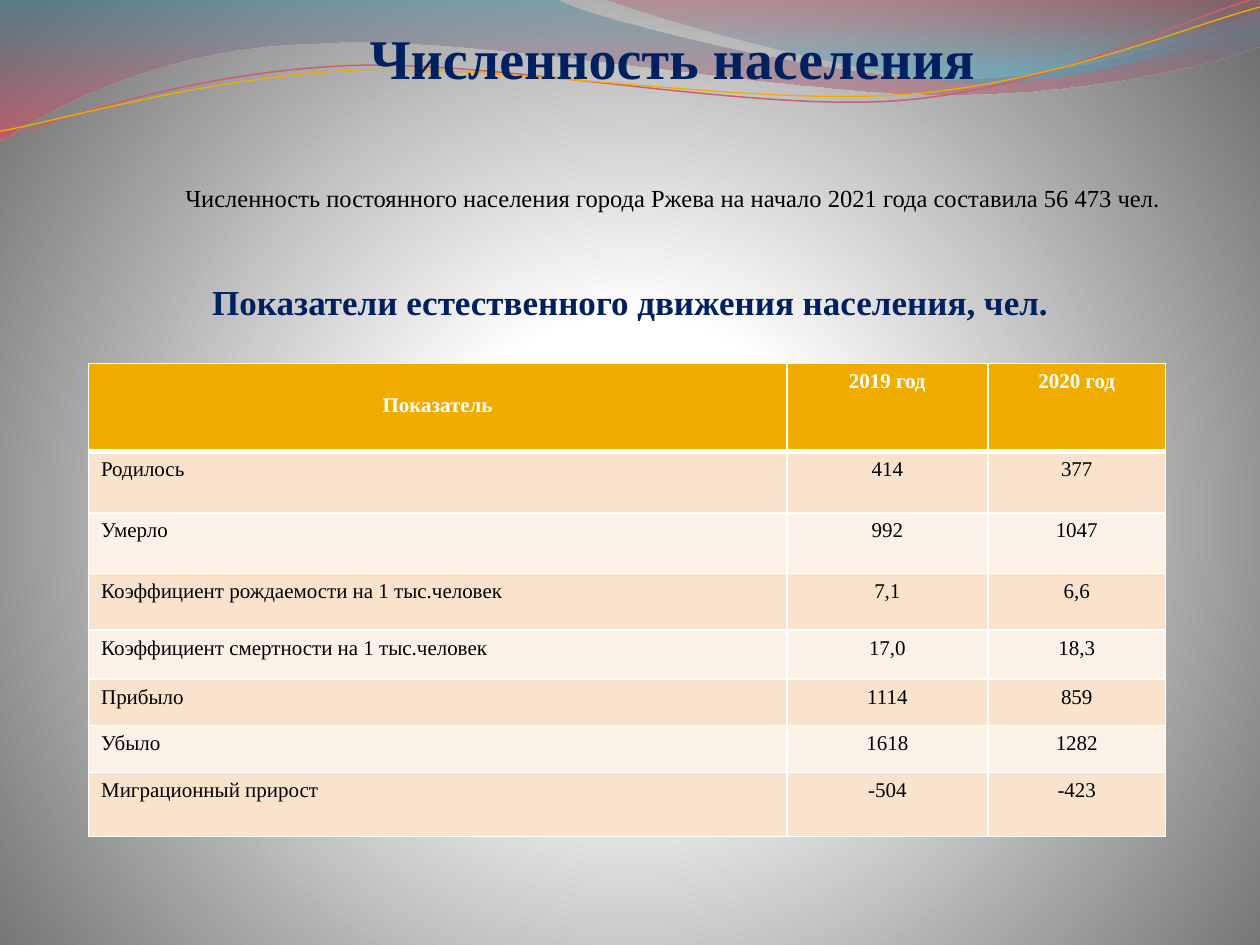
from pptx import Presentation
from pptx.dml.color import RGBColor
from pptx.enum.text import MSO_ANCHOR, MSO_AUTO_SIZE, PP_ALIGN
from pptx.oxml import parse_xml
from pptx.oxml.ns import nsdecls, qn
from pptx.util import Pt

FONT = "Times New Roman"
NAVY = RGBColor(0x00, 0x20, 0x60)
BLACK = RGBColor(0x00, 0x00, 0x00)
WHITE = RGBColor(0xFF, 0xFF, 0xFF)
GOLD = RGBColor(0xF0, 0xAD, 0x00)
ROSE = RGBColor(0xCB, 0x5F, 0x6E)
TEAL = RGBColor(0x3F, 0x8A, 0x9F)
RED = RGBColor(0xEF, 0x44, 0x5B)
DARK_RED = RGBColor(0xB8, 0x42, 0x53)
AQUA = RGBColor(0x42, 0xAB, 0xC7)
GREY = RGBColor(0x70, 0x70, 0x70)
BANDS = [RGBColor(0xFC, 0xF1, 0xE7), RGBColor(0xF9, 0xE3, 0xCC)]

DOWNWARD = '<a:lin ang="5400000" scaled="0"/>'
RADIAL = ('<a:path path="circle"><a:fillToRect l="10000" t="110000" '
          'r="10000" b="100000"/></a:path>')


def set_gradient(fill, properties, stops, shade):
    """Fill with (position %, colour, opacity %) stops."""
    fill.background()
    stop_xml = ""
    for position, color, opacity in stops:
        alpha = f'<a:alpha val="{opacity * 1000}"/>' if opacity < 100 else ""
        stop_xml += (f'<a:gs pos="{position * 1000}">'
                     f'<a:srgbClr val="{color}">{alpha}</a:srgbClr></a:gs>')
    gradient = parse_xml(f'<a:gradFill {nsdecls("a")} rotWithShape="1">'
                         f'<a:gsLst>{stop_xml}</a:gsLst>{shade}</a:gradFill>')
    properties.replace(properties.find(qn("a:noFill")), gradient)


def add_wave(start, segments, close):
    """Draw lines (x, y) and cubic curves (x1, y1, x2, y2, x, y) from start."""
    points = [(Pt(segment[i]), Pt(segment[i + 1]))
              for segment in segments for i in range(0, len(segment), 2)]
    builder = slide.shapes.build_freeform(Pt(start[0]), Pt(start[1]), scale=1.0)
    builder.add_line_segments(points, close=close)
    wave = builder.convert_to_shape()
    wave.shadow.inherit = False
    # Merge the three points of each curve into one Bezier command
    steps = iter(wave.element.findall(".//" + qn("a:lnTo")))
    for segment in segments:
        step = next(steps)
        if len(segment) == 6:
            curve = parse_xml(f'<a:cubicBezTo {nsdecls("a")}/>')
            step.addprevious(curve)
            for control in (step, next(steps), next(steps)):
                curve.append(control[0])
                control.getparent().remove(control)
    return wave


deck = Presentation()
deck.slide_width, deck.slide_height = Pt(720), Pt(540)
slide = deck.slides.add_slide(deck.slide_layouts[5])

# Background and waves
background_fill = slide.background.fill
background_fill.background()
set_gradient(background_fill, slide.element.find(".//" + qn("p:bgPr")),
             [(0, WHITE, 100), (25, WHITE, 100), (100, GREY, 100)], RADIAL)

bands = [
    ((0, 0),
     [(317, -1), (343, 12, 478, 45, 546, 45), (614, 45, 690, 19, 720, 6),
      (721, 26), (708, 32, 626, 55, 537, 54), (448, 54, 275, 20, 185, 24.5),
      (93, 26, 33, 60, -1, 81), (0, 0)],
     [(0, TEAL, 45), (100, RED, 55)]),
    ((345, -1),
     [(366, 8, 491, 44.6, 554, 47), (616, 50, 692, 23, 720, 15), (720, 0), (345, -1)],
     [(0, DARK_RED, 30), (80, AQUA, 45)]),
]
for start, segments, stops in bands:
    band = add_wave(start, segments, True)
    band.line.fill.background()
    set_gradient(band.fill, band.element.spPr, stops, DOWNWARD)

strands = [
    ((0, 80), [(35, 67, 114, 41, 199, 37.5), (284, 34, 427, 64, 513, 57.5),
               (600, 51, 675, 11, 719, -1.5)], ROSE, 0.85),
    ((0, 75), [(34, 69, 118, 44, 204, 40), (290, 37, 430, 60.5, 516, 54),
               (602, 48, 678, 15, 720, 4)], GOLD, 0.75),
]
for start, segments, color, width in strands:
    strand = add_wave(start, segments, False)
    strand.fill.background()
    strand.line.color.rgb = color
    strand.line.width = Pt(width)

# Title, moved in front of the waves
title = slide.shapes.title
slide.shapes.element.append(title.element)
title.left, title.top, title.width, title.height = Pt(118), Pt(28), Pt(534), Pt(62)
frame = title.text_frame
frame.auto_size = MSO_AUTO_SIZE.NONE
frame.vertical_anchor = MSO_ANCHOR.BOTTOM
frame.margin_left = frame.margin_top = 0
frame.margin_right, frame.margin_bottom = Pt(1.5), Pt(38)

population = slide.shapes.add_textbox(Pt(56.3), Pt(101.2), Pt(624.5), Pt(24.5))
subtitle = slide.shapes.add_textbox(Pt(39.5), Pt(157), Pt(641.5), Pt(31.5))
texts = [
    (title, "Численность населения", 32, NAVY, True, PP_ALIGN.CENTER),
    (population, "Численность постоянного населения города Ржева на начало "
     "2021 года составила 56 473 чел.", 14, BLACK, False, PP_ALIGN.JUSTIFY),
    (subtitle, "Показатели естественного движения населения, чел.",
     20, NAVY, True, PP_ALIGN.CENTER),
]
for box, text, size, color, bold, align in texts:
    box.text_frame.text = text
    box.text_frame.word_wrap = True
    para = box.text_frame.paragraphs[0]
    para.alignment = align
    font = para.runs[0].font
    font.name, font.size, font.bold = FONT, Pt(size), bold
    font.color.rgb = color
first_line = population.text_frame.paragraphs[0]
first_line._p.get_or_add_pPr().set("indent", str(Pt(42.5)))

# Table
rows = [
    ("Показатель", "2019 год", "2020 год"),
    ("Родилось", "414", "377"),
    ("Умерло", "992", "1047"),
    ("Коэффициент рождаемости на 1 тыс.человек", "7,1", "6,6"),
    ("Коэффициент смертности на 1 тыс.человек", "17,0", "18,3"),
    ("Прибыло", "1114", "859"),
    ("Убыло", "1618", "1282"),
    ("Миграционный прирост", "-504", "-423"),
]
column_widths = [399, 115, 101.5]
row_heights = [50.5, 35, 34.5, 32.5, 28, 26.5, 27, 36.5]
table = slide.shapes.add_table(len(rows), len(column_widths), Pt(50.6), Pt(207.6),
                               Pt(sum(column_widths)), Pt(sum(row_heights))).table
for column, width in zip(table.columns, column_widths):
    column.width = Pt(width)
for row_index, (values, height) in enumerate(zip(rows, row_heights)):
    table.rows[row_index].height = Pt(height)
    header = row_index == 0
    for column_index, value in enumerate(values):
        cell = table.cell(row_index, column_index)
        cell.fill.solid()
        cell.fill.fore_color.rgb = GOLD if header else BANDS[row_index % 2]
        cell.text_frame.text = value
        para = cell.text_frame.paragraphs[0]
        centered = header or column_index > 0
        para.alignment = PP_ALIGN.CENTER if centered else PP_ALIGN.LEFT
        font = para.runs[0].font
        font.name, font.size, font.bold = FONT, Pt(12), header
        font.color.rgb = WHITE if header else BLACK
        if header:
            borders = [("L", 1), ("R", 1), ("T", 1), ("B", 3)]
            for index, (side, width) in enumerate(borders):
                cell._tc.get_or_add_tcPr().insert(index, parse_xml(
                    f'<a:ln{side} {nsdecls("a")} w="{Pt(width)}"><a:solidFill>'
                    f'<a:srgbClr val="{WHITE}"/></a:solidFill></a:ln{side}>'))
table.cell(0, 0).margin_top = Pt(17.4)

deck.save("out.pptx")
